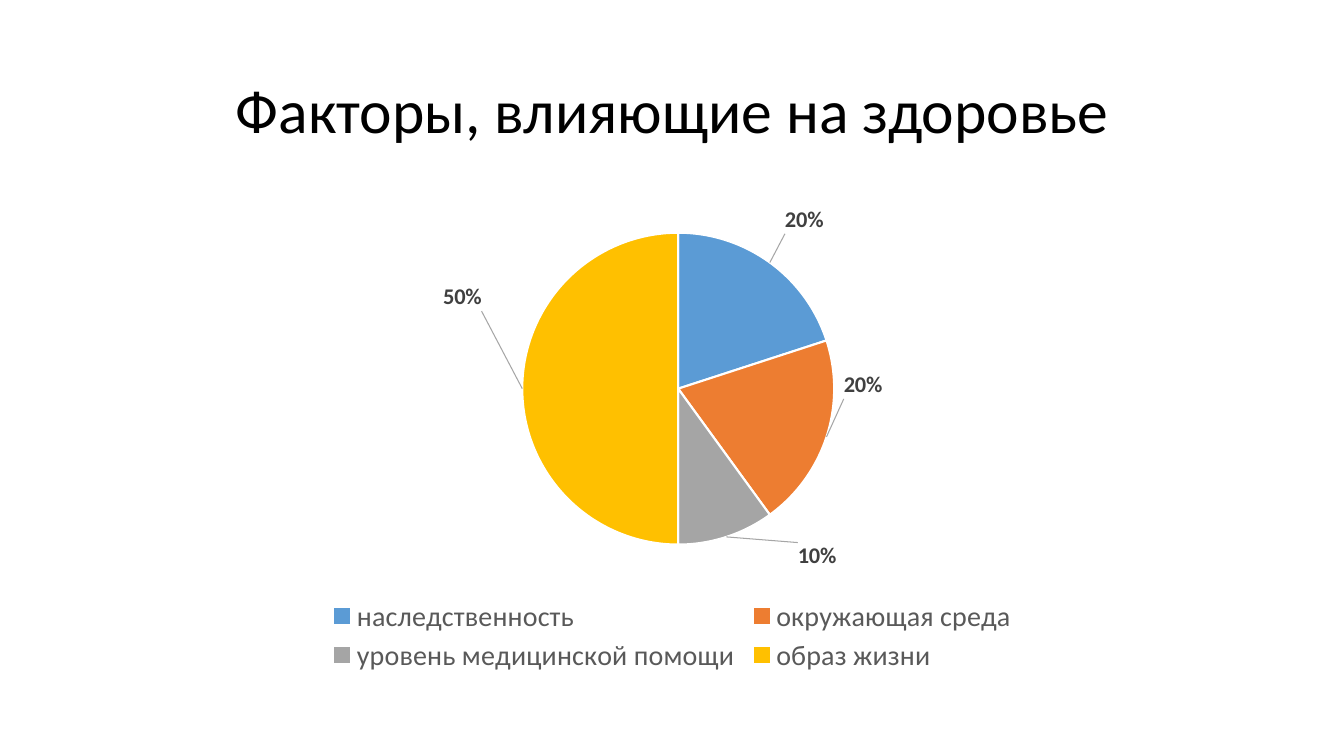
import copy
from dataclasses import dataclass
from typing import Any

import lxml.etree
import pptx
import pptx.chart.data
import pptx.dml.color
import pptx.enum.chart
import pptx.enum.text
import pptx.oxml
import pptx.oxml.ns
import pptx.util

Inches = pptx.util.Inches
Pt = pptx.util.Pt
RGBColor = pptx.dml.color.RGBColor

BLACK = RGBColor(0x00, 0x00, 0x00)
WHITE = RGBColor(0xFF, 0xFF, 0xFF)
LABEL_GREY = RGBColor(0x40, 0x40, 0x40)
LEGEND_GREY = RGBColor(0x59, 0x59, 0x59)
LEADER_GREY = RGBColor(0xA6, 0xA6, 0xA6)
BLUE = RGBColor(0x5B, 0x9B, 0xD5)
ORANGE = RGBColor(0xED, 0x7D, 0x31)
GREY = RGBColor(0xA5, 0xA5, 0xA5)
GOLD = RGBColor(0xFF, 0xC0, 0x00)

TITLE_FONT = {"name": "Calibri", "size": Pt(44), "color": BLACK}
CHART_FONT = {"name": "Calibri", "size": Pt(10), "color": BLACK}
LEGEND_FONT = {"name": "Calibri", "size": Pt(20), "color": LEGEND_GREY}
LABEL_FONT = {"name": "Calibri", "size": Pt(16), "bold": True, "color": LABEL_GREY}


@dataclass(frozen=True)
class Factor:
    name: str
    share: int
    color: RGBColor
    label_x: float
    label_y: float


FACTORS = [
    Factor("наследственность", 20, BLUE, 0.01, -0.05),
    Factor("окружающая среда", 20, ORANGE, 0.01, -0.14),
    Factor("уровень медицинской помощи", 10, GREY, 0.06, 0),
    Factor("образ жизни", 50, GOLD, -0.03, -0.19),
]


def format_font(font: Any, values: dict[str, Any]) -> None:
    for key, value in values.items():
        if key == "color":
            font.color.rgb = value
        else:
            setattr(font, key, value)


def chart_element(content: str) -> Any:
    tag = content.split(">")[0].split("/")[0]
    spaces = pptx.oxml.ns.nsdecls("c", "a")
    return pptx.oxml.parse_xml(content.replace(tag, f"{tag} {spaces}", 1))


def manual_layout(**values: Any) -> Any:
    fields = "".join(f'<c:{key} val="{value}"/>' for key, value in values.items())
    return chart_element(
        f"<c:layout><c:manualLayout>{fields}</c:manualLayout></c:layout>"
    )


def place_layout(parent: Any, position: int, layout: Any) -> None:
    for old in parent.findall(pptx.oxml.ns.qn("c:layout")):
        parent.remove(old)
    parent.insert(position, layout)


def add_title(page: Any) -> None:
    title = page.shapes.title
    title.left, title.top = Inches(0.92), Inches(0.4)
    title.width, title.height = Inches(11.5), Inches(1.45)
    frame = title.text_frame
    frame.word_wrap = True
    frame.vertical_anchor = pptx.enum.text.MSO_ANCHOR.MIDDLE
    para = frame.paragraphs[0]
    para.alignment = pptx.enum.text.PP_ALIGN.CENTER
    para.line_spacing = 0.9
    span = para.add_run()
    span.text = "Факторы, влияющие на здоровье"
    format_font(span.font, TITLE_FONT)


def add_labels(series: Any) -> None:
    labels = series.data_labels
    format_font(labels.font, LABEL_FONT)
    labels.show_value = False
    labels.show_percentage = True
    labels.position = pptx.enum.chart.XL_LABEL_POSITION.OUTSIDE_END
    root = labels._element
    shared = [
        child for child in root
        if lxml.etree.QName(child).localname != "showLeaderLines"
    ]
    for index, factor in enumerate(FACTORS):
        label = chart_element(f'<c:dLbl><c:idx val="{index}"/></c:dLbl>')
        label.append(manual_layout(x=factor.label_x, y=factor.label_y))
        for child in shared:
            label.append(copy.deepcopy(child))
        root.insert(index, label)
    root.append(chart_element(
        "<c:leaderLines><c:spPr><a:ln w=\"9525\"><a:solidFill>"
        f'<a:srgbClr val="{LEADER_GREY}"/>'
        "</a:solidFill></a:ln></c:spPr></c:leaderLines>"
    ))


def add_pie(page: Any) -> None:
    data = pptx.chart.data.CategoryChartData()
    data.categories = [factor.name for factor in FACTORS]
    data.add_series("Series 1", [factor.share for factor in FACTORS])
    chart = page.shapes.add_chart(
        pptx.enum.chart.XL_CHART_TYPE.PIE,
        Inches(0.92), Inches(2), Inches(11.5), Inches(4.76), data,
    ).chart
    chart.has_title = False
    format_font(chart.font, CHART_FONT)
    chart.has_legend = True
    legend = chart.legend
    legend.position = pptx.enum.chart.XL_LEGEND_POSITION.BOTTOM
    legend.include_in_layout = False
    format_font(legend.font, LEGEND_FONT)
    place_layout(legend._element, 1, manual_layout(
        xMode="edge", yMode="edge", x=0.2, y=0.82, w=0.6, h=0.17,
    ))
    plot = chart.plots[0]
    plot.vary_by_categories = True
    place_layout(plot._element.getparent(), 0, manual_layout(
        layoutTarget="inner", xMode="edge", yMode="edge",
        x=0.37, y=0.065, w=0.27, h=0.65,
    ))
    series = plot.series[0]
    for index, factor in enumerate(FACTORS):
        slice_format = series.points[index].format
        slice_format.fill.solid()
        slice_format.fill.fore_color.rgb = factor.color
        slice_format.line.color.rgb = WHITE
        slice_format.line.width = Pt(1.5)
    add_labels(series)


def main() -> None:
    deck = pptx.Presentation()
    deck.slide_width, deck.slide_height = Inches(13.33), Inches(7.5)
    page = deck.slides.add_slide(deck.slide_layouts[5])
    page.background.fill.solid()
    page.background.fill.fore_color.rgb = WHITE
    add_title(page)
    add_pie(page)
    deck.save("out.pptx")


if __name__ == "__main__":
    main()
